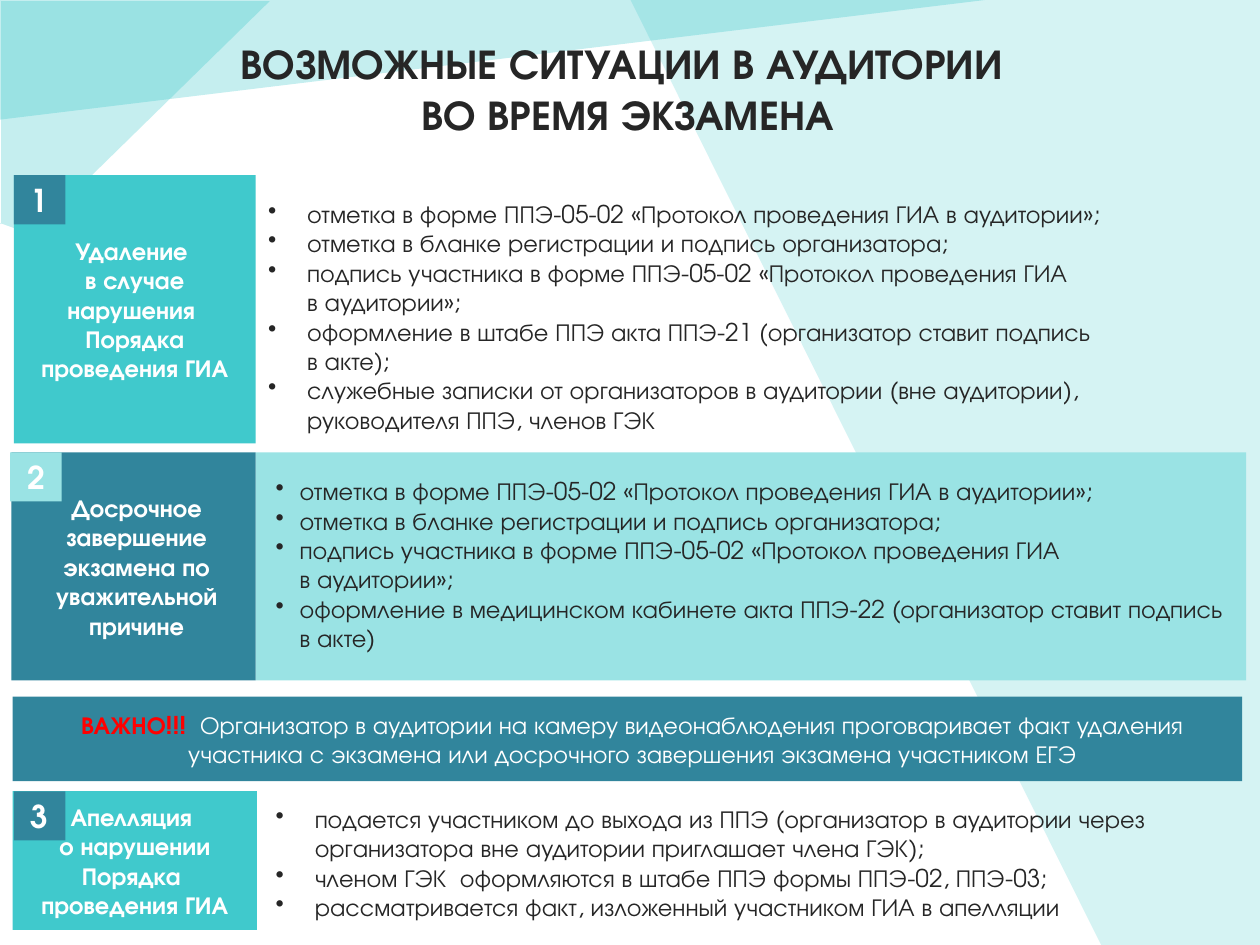
from dataclasses import dataclass

from lxml.etree import SubElement
from pptx import Presentation
from pptx.dml.color import RGBColor
from pptx.enum.shapes import MSO_SHAPE
from pptx.enum.text import MSO_ANCHOR, PP_ALIGN
from pptx.oxml.ns import qn
from pptx.util import Inches, Pt


@dataclass(frozen=True)
class Theme:
    font: str = "TeX Gyre Adventor"
    ink: str = "262626"
    white: str = "FFFFFF"
    alert: str = "FF0000"
    turquoise: str = "40C9CC"
    pale: str = "9AE3E4"
    steel: str = "31859C"
    backdrop: str = "20C0C4"
    title_size: int = 24
    number_size: int = 18
    body_size: int = 14


THEME = Theme()

BACKDROP = [  # opacity in percent, corners
    (26, [(7.82, 0), (0, 0.95), (0, -0.01)]),
    (19, [(10.04, 7.5), (8.74, 7.5), (5, -0.01), (10.04, -0.01)]),
    (26, [(0, 1.77), (0.25, 1.86), (2.14, 0.01), (0.01, 0.01), (0.01, 1.78)]),
]

COMMON_STEPS = [
    "отметка в форме ППЭ-05-02 «Протокол проведения ГИА в аудитории»;",
    "отметка в бланке регистрации и подпись организатора;",
    "подпись участника в форме ППЭ-05-02 «Протокол проведения ГИА \nв аудитории»;",
]
REMOVAL_STEPS = COMMON_STEPS + [
    "оформление в штабе ППЭ акта ППЭ-21 (организатор ставит подпись \nв акте);",
    "служебные записки от организаторов в аудитории (вне аудитории), \n"
    "руководителя ППЭ, членов ГЭК",
]
EARLY_FINISH_STEPS = COMMON_STEPS + [
    "оформление в медицинском кабинете акта ППЭ-22 (организатор ставит подпись в акте)",
]
APPEAL_STEPS = [
    "подается участником до выхода из ППЭ (организатор в аудитории через "
    "организатора вне аудитории приглашает члена ГЭК);",
    "членом ГЭК  оформляются в штабе ППЭ формы ППЭ-02, ППЭ-03;",
    "рассматривается факт, изложенный участником ГИА в апелляции",
]


def rgb(color):
    return RGBColor.from_string(color)


def set_font(font, size, color, bold=False):
    font.name = THEME.font
    font.size = Pt(size)
    font.bold = bold
    font.color.rgb = rgb(color)


def set_indent(para, left, first=0):
    properties = para._p.get_or_add_pPr()
    properties.set("marL", str(Inches(left)))
    properties.set("indent", str(Inches(first)))
    return properties


def paint(shape, color):
    shape.shadow.inherit = False
    shape.fill.solid()
    shape.fill.fore_color.rgb = rgb(color)
    shape.line.fill.background()


def add_facet(page, opacity, corners):
    """Draw one translucent polygon of the backdrop."""
    points = [(Inches(x), Inches(y)) for x, y in corners]
    builder = page.shapes.build_freeform(*points[0])
    builder.add_line_segments(points[1:], close=True)
    facet = builder.convert_to_shape()
    paint(facet, THEME.backdrop)
    color = facet.fill._xPr.find(qn("a:solidFill"))[0]
    SubElement(color, qn("a:alpha")).set("val", str(opacity * 1000))


def add_panel(page, area, color, text="", size=THEME.body_size, indent=0):
    """Draw a filled rectangle with centred bold text; return its paragraph."""
    panel = page.shapes.add_shape(MSO_SHAPE.RECTANGLE, *map(Inches, area))
    paint(panel, color)
    frame = panel.text_frame
    frame.word_wrap = True
    frame.vertical_anchor = MSO_ANCHOR.MIDDLE
    para = frame.paragraphs[0]
    para.text = text
    para.alignment = PP_ALIGN.CENTER
    set_indent(para, indent)
    set_font(para.font, size, THEME.white, bold=True)
    return para


def add_text_frame(page, area):
    frame = page.shapes.add_textbox(*map(Inches, area)).text_frame
    frame.word_wrap = True
    return frame


def add_paragraphs(frame, texts):
    for number, text in enumerate(texts):
        para = frame.add_paragraph() if number else frame.paragraphs[0]
        para.text = text
        yield para


def add_title(page):
    frame = add_text_frame(page, (0.08, 0.12, 9.8, 1.16))
    frame.vertical_anchor = MSO_ANCHOR.MIDDLE
    lines = ["ВОЗМОЖНЫЕ СИТУАЦИИ В АУДИТОРИИ ", "ВО ВРЕМЯ ЭКЗАМЕНА"]
    for para in add_paragraphs(frame, lines):
        para.alignment = PP_ALIGN.CENTER
        set_font(para.font, THEME.title_size, THEME.ink, bold=True)


def add_steps(page, area, steps, hang):
    for para in add_paragraphs(add_text_frame(page, area), steps):
        set_font(para.font, THEME.body_size, THEME.ink)
        properties = set_indent(para, hang, -hang)
        bullet = properties.makeelement(qn("a:buChar"), {"char": "•"})
        properties.find(qn("a:defRPr")).addprevious(bullet)


def add_number(page, left, top, number, color):
    add_panel(page, (left, top, 0.41, 0.39), color, number, THEME.number_size)


def add_warning(page):
    para = add_panel(page, (0.1, 5.53, 9.76, 0.67), THEME.steel, indent=0.08)
    parts = [
        ("ВАЖНО!!!  ", THEME.alert, True),
        ("Организатор в аудитории на камеру видеонаблюдения проговаривает факт "
         "удаления участника с экзамена или досрочного завершения экзамена "
         "участником ЕГЭ", THEME.white, False),
    ]
    for text, color, bold in parts:
        span = para.add_run()
        span.text = text
        set_font(span.font, THEME.body_size, color, bold)


def main():
    deck = Presentation()
    deck.slide_width, deck.slide_height = Inches(10), Inches(7.5)
    page = deck.slides.add_slide(deck.slide_layouts[6])

    for opacity, corners in BACKDROP:
        add_facet(page, opacity, corners)
    add_title(page)

    add_panel(page, (0.11, 1.39, 1.92, 2.13), THEME.turquoise,
              "Удаление \nв случае нарушения \nПорядка проведения ГИА")
    add_number(page, 0.11, 1.39, "1", THEME.steel)
    add_steps(page, (2.03, 1.53, 8.11, 1.99), REMOVAL_STEPS, hang=0.31)

    add_panel(page, (2.03, 3.59, 7.86, 1.81), THEME.pale)
    add_panel(page, (0.09, 3.59, 1.94, 1.81), THEME.steel,
              "Досрочное завершение экзамена по уважительной причине", indent=0.05)
    add_number(page, 0.08, 3.59, "2", THEME.pale)
    add_steps(page, (2.09, 3.73, 7.77, 1.51), EARLY_FINISH_STEPS, hang=0.19)

    add_warning(page)

    add_panel(page, (0.1, 6.28, 1.94, 1.1), THEME.turquoise,
              "Апелляция \nо нарушении Порядка \nпроведения ГИА")
    add_number(page, 0.11, 6.28, "3", THEME.steel)
    add_steps(page, (2.09, 6.33, 7.77, 1.04), APPEAL_STEPS, hang=0.31)

    deck.save("out.pptx")


if __name__ == "__main__":
    main()
